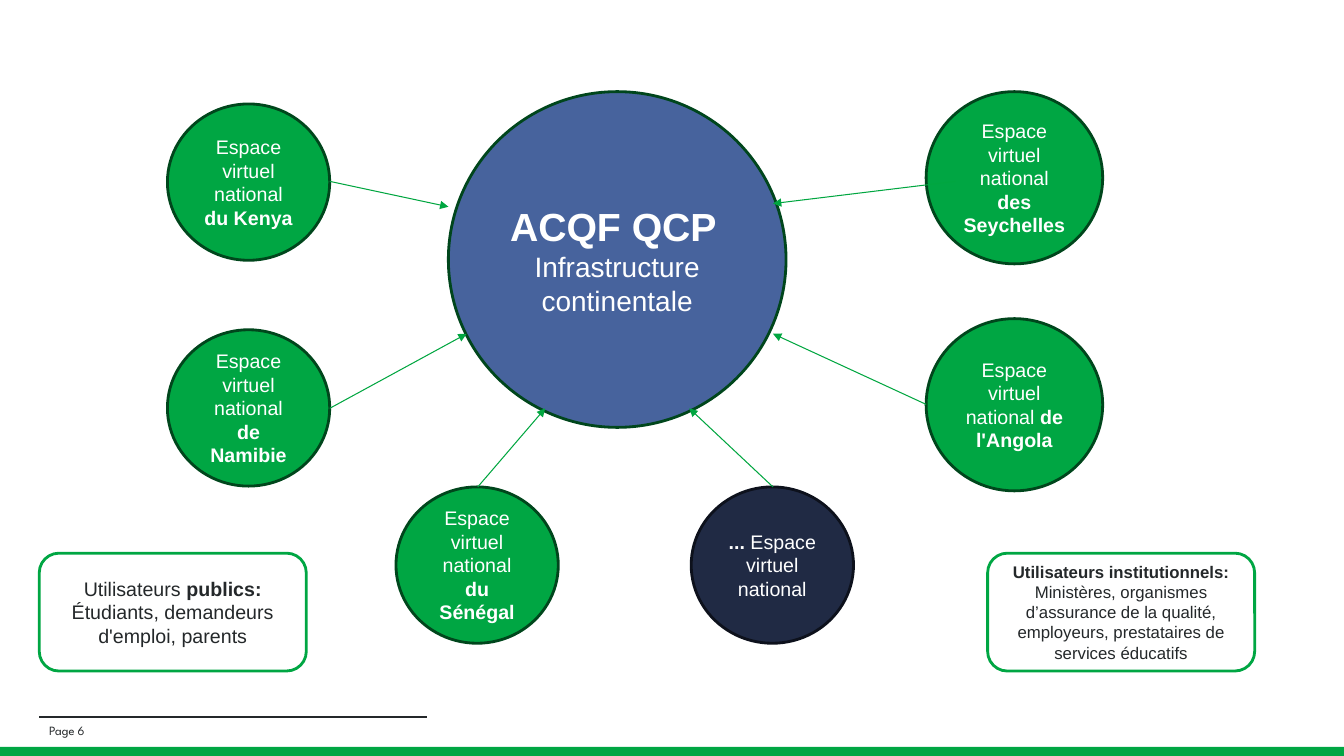
from lxml.etree import SubElement
from pptx import Presentation
from pptx.dml.color import RGBColor
from pptx.enum.shapes import MSO_CONNECTOR, MSO_SHAPE
from pptx.enum.text import MSO_ANCHOR, PP_ALIGN
from pptx.oxml.ns import qn
from pptx.util import Cm, Pt

GREEN, DARK_GREEN, ARROW_GREEN = "00A643", "00461C", "00A640"
BLUE, NAVY, BLACK = "47639D", "202A44", "0D111C"
INK, WHITE = "24282A", "FFFFFF"
SMALL, LARGE = (4.09, 3.94), (4.45, 4.34)
BOX = (6.73, 2.97)
SPACE = "Espace virtuel national "

CIRCLES = [
    (4.22, 2.62, SMALL, "du Kenya"),
    (4.22, 8.31, SMALL, "de Namibie"),
    (9.98, 12.27, SMALL, "du Sénégal"),
    (23.34, 2.31, LARGE, "des Seychelles "),
    (23.34, 8.03, LARGE, "de l'Angola"),
]
ARROWS = [
    (8.31, 4.57, 11.3, 5.21),
    (8.31, 10.29, 11.76, 8.41),
    (12.04, 12.27, 13.74, 10.29),
    (19.48, 12.27, 17.37, 10.29),
    (23.34, 10.19, 19.48, 8.41),
    (24.08, 4.57, 19.48, 5.13),
]


def rgb(color):
    return RGBColor.from_string(color)


def write(tf, paragraphs, color, font="Arial", align=PP_ALIGN.CENTER):
    tf.word_wrap = True
    tf.vertical_anchor = MSO_ANCHOR.MIDDLE
    for i, pieces in enumerate(paragraphs):
        p = tf.add_paragraph() if i else tf.paragraphs[0]
        p.alignment = align
        for text, size, bold in pieces:
            if text == "\n":
                p.add_line_break()
                continue
            r = p.add_run()
            r.text = text
            r.font.name = font
            r.font.size = Pt(size)
            r.font.bold = bold
            r.font.color.rgb = rgb(color)


def add_shape(s, kind, x, y, size, fill, line=None):
    sp = s.shapes.add_shape(kind, Cm(x), Cm(y), Cm(size[0]), Cm(size[1]))
    sp.shadow.inherit = False
    sp.fill.solid()
    sp.fill.fore_color.rgb = rgb(fill)
    if line:
        sp.line.color.rgb = rgb(line)
        sp.line.width = Pt(2)
    else:
        sp.line.fill.background()
    return sp


def add_circle(s, x, y, size, pieces, fill=GREEN, line=DARK_GREEN):
    sp = add_shape(s, MSO_SHAPE.FLOWCHART_CONNECTOR, x, y, size, fill, line)
    write(sp.text_frame, [pieces], WHITE)


def add_user_box(s, x, paragraphs):
    sp = add_shape(s, MSO_SHAPE.ROUNDED_RECTANGLE, x, 13.94, BOX, WHITE, GREEN)
    write(sp.text_frame, paragraphs, INK)


def add_line(s, x1, y1, x2, y2, color, width, arrow=False):
    cx = s.shapes.add_connector(
        MSO_CONNECTOR.STRAIGHT, Cm(x1), Cm(y1), Cm(x2), Cm(y2))
    cx.line.color.rgb = rgb(color)
    cx.line.width = Pt(width)
    if arrow:
        SubElement(cx.line._get_or_add_ln(), qn("a:tailEnd"), type="triangle")
    SubElement(cx._element.spPr, qn("a:effectLst"))


def add_footer(s):
    add_shape(s, MSO_SHAPE.RECTANGLE, 0, 18.82, (33.87, 0.23), GREEN)
    add_line(s, 0.99, 18.06, 10.77, 18.06, INK, 1.5)
    tb = s.shapes.add_textbox(Cm(0.99), Cm(18.16), Cm(10.31), Cm(0.48))
    write(tb.text_frame, [[("Page 6", 9, False)]], INK,
          "League Spartan", PP_ALIGN.LEFT)


def main():
    prs = Presentation()
    prs.slide_width, prs.slide_height = Cm(33.87), Cm(19.05)
    s = prs.slides.add_slide(prs.slide_layouts[6])
    add_footer(s)

    hub = add_shape(s, MSO_SHAPE.OVAL, 11.3, 2.31, (8.51, 8.46),
                    BLUE, DARK_GREEN)
    write(hub.text_frame, [[
        ("ACQF QCP", 28, True), (" ", 20, False), ("\n", 20, False),
        ("Infrastructure continentale", 20, False)]], WHITE)

    for x, y, size, country in CIRCLES:
        add_circle(s, x, y, size, [(SPACE, 14, False), (country, 14, True)])
    add_circle(s, 17.42, 12.27, SMALL,
               [("...", 14, True), (" " + SPACE.strip(), 14, False)],
               NAVY, BLACK)
    for ends in ARROWS:
        add_line(s, *ends, ARROW_GREEN, 0.75, arrow=True)

    add_user_box(s, 0.99, [[
        ("Utilisateurs ", 14, False), ("publics:", 14, True),
        ("\n", 14, False),
        ("Étudiants, demandeurs d'emploi, parents", 14, False)]])
    add_user_box(s, 24.89, [
        [("Utilisateurs institutionnels:", 12, True)],
        [("Ministères, organismes d’assurance de la qualité, employeurs, "
          "prestataires de services éducatifs", 12, False)]])
    prs.save("out.pptx")


if __name__ == "__main__":
    main()
